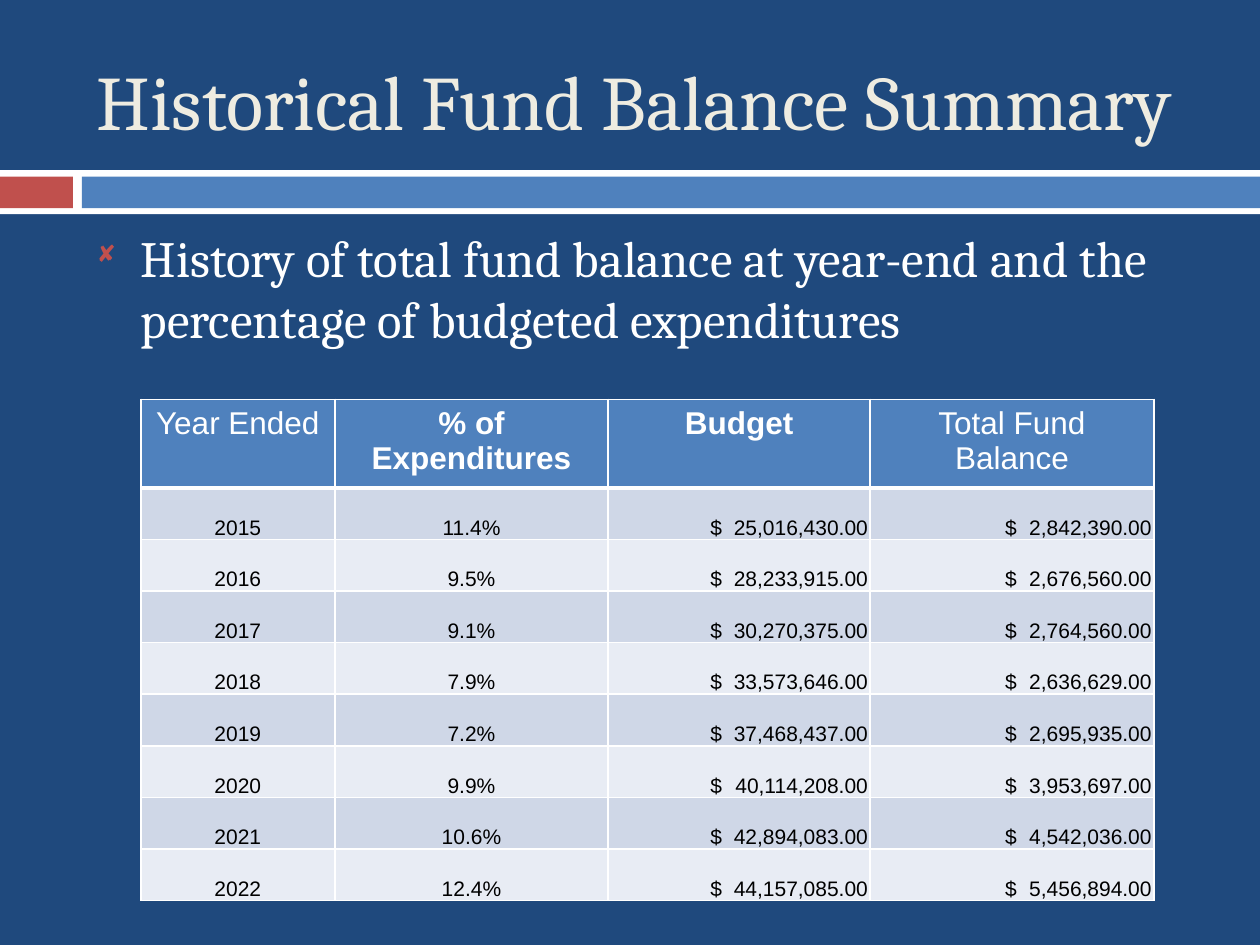
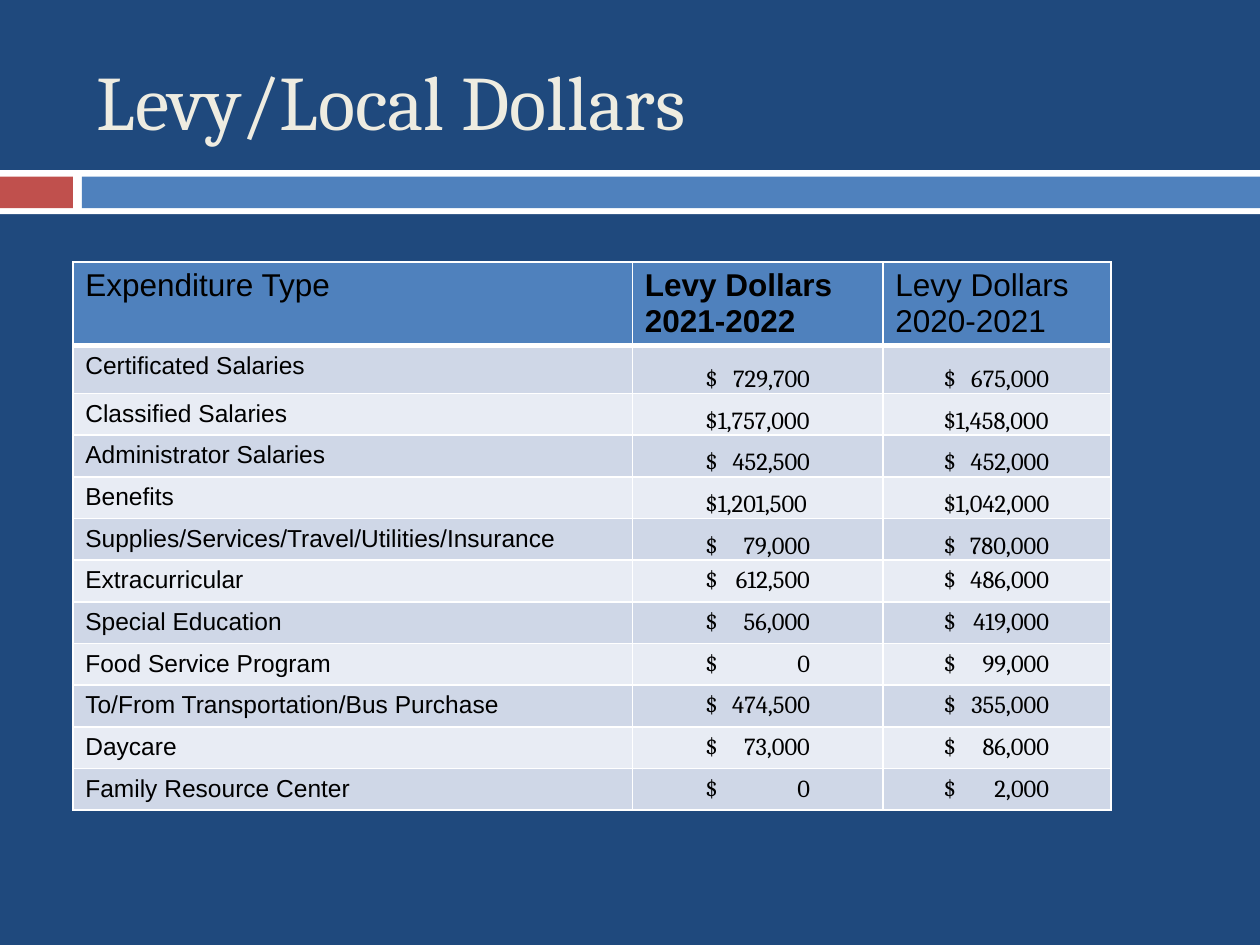
"""Build two fund balance and levy slides, each with a banded title and a table."""
from lxml.etree import SubElement
from pptx import Presentation
from pptx.dml.color import RGBColor
from pptx.enum.shapes import MSO_SHAPE
from pptx.enum.text import MSO_ANCHOR, MSO_AUTO_SIZE, PP_ALIGN
from pptx.oxml.ns import qn
from pptx.util import Cm, Pt

COLORS = {
    "navy": "1F497D", "white": "FFFFFF", "black": "000000", "cream": "EEECE1",
    "red": "C0504D", "blue": "4F81BD", "odd": "CFD7E7", "even": "E8ECF4",
}
BANDS = [
    (0, 3.43, 25.4, 0.89, "white"),
    (0, 3.56, 1.47, 0.64, "red"),
    (1.65, 3.56, 23.75, 0.64, "blue"),
]
SLIDES = [
    {
        "title": "Historical Fund Balance Summary",
        "bullet": "History of total fund balance at year-end and the "
                  "percentage of budgeted expenditures",
        "at": (2.84, 8.05),
        "cols": [3.91, 5.51, 5.28, 5.72],
        "heights": [1.09] + [1.04] * 8,
        "header": [["Year Ended"], ["% of Expenditures"], ["Budget"], ["Total Fund Balance"]],
        "header_color": "white",
        "header_align": PP_ALIGN.CENTER,
        "label_cols": 0,
        "size": 12,
        "money_font": "Arial",
        "money_tabs": {2: (2.06, 3.18), 3: (2.72, 2.96)},
        "bottom_rows": 8,
        "rows": [
            ("2015", "11.4%", "$ 25,016,430.00", "$ 2,842,390.00"),
            ("2016", "9.5%", "$ 28,233,915.00", "$ 2,676,560.00"),
            ("2017", "9.1%", "$ 30,270,375.00", "$ 2,764,560.00"),
            ("2018", "7.9%", "$ 33,573,646.00", "$ 2,636,629.00"),
            ("2019", "7.2%", "$ 37,468,437.00", "$ 2,695,935.00"),
            ("2020", "9.9%", "$ 40,114,208.00", "$ 3,953,697.00"),
            ("2021", "10.6%", "$ 42,894,083.00", "$ 4,542,036.00"),
            ("2022", "12.4%", "$ 44,157,085.00", "$ 5,456,894.00"),
        ],
    },
    {
        "title": "Levy/Local Dollars",
        "bullet": None,
        "at": (1.47, 5.28),
        "cols": [11.28, 5.05, 4.6],
        "heights": [1.52, 0.97] + [0.84] * 10,
        "header": [["Expenditure Type"], ["Levy Dollars", "2021-2022"],
                   ["Levy Dollars", "2020-2021"]],
        "header_color": "black",
        "header_align": PP_ALIGN.LEFT,
        "label_cols": 1,
        "size": 14,
        "money_font": "Cambria",
        "money_tabs": {1: (1.47, 2.11), 2: (1.22, 2.13)},
        "bottom_rows": 5,
        "rows": [
            ("Certificated Salaries", "$ 729,700", "$ 675,000"),
            ("Classified Salaries", "$1,757,000", "$1,458,000"),
            ("Administrator Salaries", "$ 452,500", "$ 452,000"),
            ("Benefits", "$1,201,500", "$1,042,000"),
            ("Supplies/Services/Travel/Utilities/Insurance", "$ 79,000", "$ 780,000"),
            ("Extracurricular", "$ 612,500", "$ 486,000"),
            ("Special Education", "$ 56,000", "$ 419,000"),
            ("Food Service Program", "$ 0", "$ 99,000"),
            ("To/From Transportation/Bus Purchase", "$ 474,500", "$ 355,000"),
            ("Daycare", "$ 73,000", "$ 86,000"),
            ("Family Resource Center", "$ 0", "$ 2,000"),
        ],
    },
]


def add_run(p, text, size, font, color, bold=False):
    r = p.add_run()
    r.text = text
    r.font.size = Pt(size)
    r.font.name = font
    r.font.bold = bold
    r.font.color.rgb = RGBColor.from_string(COLORS[color])


def style_cell(cell, fill, top, bottom):
    tcPr = cell._tc.get_or_add_tcPr()
    for side, width in (("L", 1), ("R", 1), ("T", top), ("B", bottom)):
        ln = SubElement(tcPr, qn(f"a:ln{side}"), w=str(Pt(width)))
        SubElement(SubElement(ln, qn("a:solidFill")), qn("a:srgbClr"), val=COLORS["white"])
    cell.fill.solid()
    cell.fill.fore_color.rgb = RGBColor.from_string(COLORS[fill])
    cell.margin_left = cell.margin_right = Cm(0.25)
    cell.margin_top = cell.margin_bottom = Cm(0.13)


prs = Presentation()
prs.slide_width, prs.slide_height = Cm(25.4), Cm(19.05)
background = prs.slide_master.background.fill
background.solid()
background.fore_color.rgb = RGBColor.from_string(COLORS["navy"])

for data in SLIDES:
    s = prs.slides.add_slide(prs.slide_layouts[5])
    for x, y, w, h, color in BANDS:
        sp = s.shapes.add_shape(MSO_SHAPE.RECTANGLE, Cm(x), Cm(y), Cm(w), Cm(h))
        sp.shadow.inherit = False
        sp.fill.solid()
        sp.fill.fore_color.rgb = RGBColor.from_string(COLORS[color])
        sp.line.fill.background()

    title = s.shapes.title
    title.left, title.top, title.width, title.height = Cm(1.7), Cm(0.64), Cm(22.66), Cm(2.74)
    tf = title.text_frame
    tf.word_wrap = True
    tf.auto_size = MSO_AUTO_SIZE.NONE
    tf.vertical_anchor = MSO_ANCHOR.MIDDLE
    tf.paragraphs[0].alignment = PP_ALIGN.LEFT
    add_run(tf.paragraphs[0], data["title"], 44, "Cambria", "cream")

    if data["bullet"]:
        tf = s.shapes.add_textbox(Cm(1.7), Cm(4.45), Cm(22.66), Cm(12.5)).text_frame
        tf.word_wrap = True
        p = tf.paragraphs[0]
        pPr = p._p.get_or_add_pPr()
        pPr.set("marL", str(Cm(0.89)))
        pPr.set("indent", str(-Cm(0.89)))
        SubElement(SubElement(pPr, qn("a:buClr")), qn("a:srgbClr"), val=COLORS["red"])
        SubElement(pPr, qn("a:buSzPct"), val="60000")
        SubElement(pPr, qn("a:buFont"), typeface="Wingdings")
        SubElement(pPr, qn("a:buChar"), char="◻")
        add_run(p, data["bullet"], 29, "Cambria", "white")

    x, y = data["at"]
    cols, heights = data["cols"], data["heights"]
    table = s.shapes.add_table(len(heights), len(cols), Cm(x), Cm(y),
                               Cm(sum(cols)), Cm(sum(heights))).table
    for col, width in zip(table.columns, cols):
        col.width = Cm(width)
    for row, height in zip(table.rows, heights):
        row.height = Cm(height)

    for j, lines in enumerate(data["header"]):
        cell = table.cell(0, j)
        style_cell(cell, "blue", 1, 3)
        tf = cell.text_frame
        for k, line in enumerate(lines):
            p = tf.add_paragraph() if k else tf.paragraphs[0]
            p.alignment = data["header_align"]
            add_run(p, line, 18, "Arial", data["header_color"], 0 < j < len(cols) - 1)

    for i, values in enumerate(data["rows"], 1):
        for j, text in enumerate(values):
            cell = table.cell(i, j)
            style_cell(cell, "odd" if i % 2 else "even", 3 if i == 1 else 1, 1)
            p = cell.text_frame.paragraphs[0]
            is_label = j < data["label_cols"]
            p.alignment = PP_ALIGN.LEFT if is_label else PP_ALIGN.CENTER
            if not is_label and i <= data["bottom_rows"]:
                cell.vertical_anchor = MSO_ANCHOR.BOTTOM
                cell.margin_left = cell.margin_right = cell.margin_top = Cm(0.03)
                cell.margin_bottom = 0
            font = "Arial"
            if j in data["money_tabs"]:
                font = data["money_font"]
                left, tab = data["money_tabs"][j]
                cell.margin_left, cell.margin_right = Cm(left), Cm(0.03)
                p.alignment = PP_ALIGN.LEFT
                tabs = SubElement(p._p.get_or_add_pPr(), qn("a:tabLst"))
                SubElement(tabs, qn("a:tab"), pos=str(Cm(tab)), algn="r")
                text = text.replace(" ", "\t")
            add_run(p, text, data["size"], font, "black")

prs.save("out.pptx")
